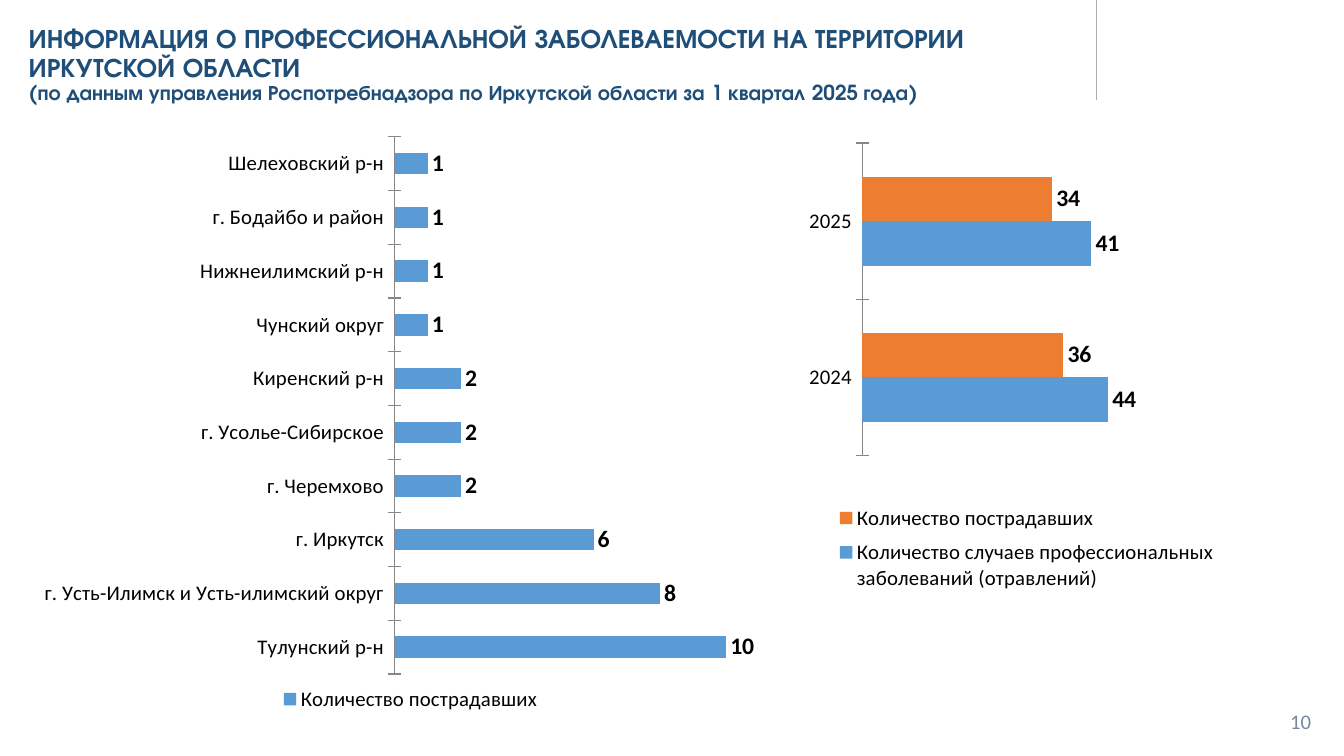
from lxml.etree import SubElement
from pptx import Presentation
from pptx.chart.data import CategoryChartData
from pptx.dml.color import RGBColor
from pptx.enum.chart import XL_CHART_TYPE, XL_LABEL_POSITION, XL_LEGEND_POSITION, XL_TICK_MARK
from pptx.enum.shapes import MSO_CONNECTOR
from pptx.enum.text import MSO_ANCHOR, MSO_AUTO_SIZE, PP_ALIGN
from pptx.oxml import parse_xml
from pptx.oxml.ns import nsdecls, qn
from pptx.util import Cm, Pt

BLUE, ORANGE = "5B9BD5", "ED7D31"


def color(value):
    return RGBColor.from_string(value)


def chart_layout(x, y, width, height, inner=False):
    target = '<c:layoutTarget val="inner"/>' if inner else ""
    return parse_xml(
        f'<c:layout {nsdecls("c")}><c:manualLayout>{target}'
        '<c:xMode val="edge"/><c:yMode val="edge"/>'
        f'<c:x val="{x}"/><c:y val="{y}"/><c:w val="{width}"/><c:h val="{height}"/>'
        "</c:manualLayout></c:layout>"
    )


presentation = Presentation()
presentation.slide_width, presentation.slide_height = Cm(32), Cm(18.01)
slide = presentation.slides.add_slide(presentation.slide_layouts[5])

# Title with the source of the data
title = slide.shapes.title
title.left, title.top, title.width, title.height = Cm(0.43), Cm(0.48), Cm(25.93), Cm(2.03)
title_frame = title.text_frame
title_frame.auto_size = MSO_AUTO_SIZE.NONE
title_frame.vertical_anchor = MSO_ANCHOR.TOP
paragraph = title_frame.paragraphs[0]
paragraph.alignment = PP_ALIGN.LEFT
paragraph.line_spacing = 0.9
title_lines = [
    ("ИНФОРМАЦИЯ О ПРОФЕССИОНАЛЬНОЙ ЗАБОЛЕВАЕМОСТИ НА ТЕРРИТОРИИ ИРКУТСКОЙ ОБЛАСТИ", 18),
    ("(по данным управления Роспотребнадзора по Иркутской области за 1 квартал 2025 года)", 14),
]
for index, (text, size) in enumerate(title_lines):
    if index:
        paragraph.add_line_break()
    run = paragraph.add_run()
    run.text = text
    run.font.size = Pt(size)
    run.font.name = "TeX Gyre Adventor"
    run.font.bold = True
    run.font.color.rgb = color("1F4E79")

# Vertical rule beside the title
rule = slide.shapes.add_connector(MSO_CONNECTOR.STRAIGHT, Cm(26.11), Cm(0), Cm(26.11), Cm(2.39))
rule.line.color.rgb = color("AFABAB")
rule.line.width = Pt(0.75)
SubElement(rule._element.spPr, qn("a:effectLst"))

# Bar charts: by district and by year
charts = [
    {
        "place": (0.74, 3.12, 18.26, 14.25),
        "categories": ["Тулунский р-н", "г. Усть-Илимск и Усть-илимский округ", "г. Иркутск",
                       "г. Черемхово", "г. Усолье-Сибирское", "Киренский р-н", "Чунский округ",
                       "Нижнеилимский р-н", "г. Бодайбо и район", "Шелеховский р-н"],
        "series": [("Количество пострадавших", [10, 8, 6, 2, 2, 2, 1, 1, 1, 1], BLUE)],
        "maximum": 12,
        "plot": (0.474, 0.01, 0.519, 0.898),
        "legend": (0.31, 0.92, 0.37, 0.06),
        "legend_position": XL_LEGEND_POSITION.RIGHT,
    },
    {
        "place": (18.67, 3.15, 10.9, 12.95),
        "categories": ["2024", "2025"],
        "series": [
            ("Количество случаев профессиональных заболеваний (отравлений)", [44, 41], BLUE),
            ("Количество пострадавших", [36, 34], ORANGE),
        ],
        "maximum": 50,
        "plot": (0.171, 0.02, 0.61, 0.575),
        "legend": (0.09, 0.67, 0.88, 0.19),
        "legend_position": XL_LEGEND_POSITION.BOTTOM,
    },
]
for settings in charts:
    data = CategoryChartData()
    data.categories = settings["categories"]
    for name, values, _ in settings["series"]:
        data.add_series(name, values)
    place = [Cm(length) for length in settings["place"]]
    chart = slide.shapes.add_chart(XL_CHART_TYPE.BAR_CLUSTERED, *place, data).chart
    chart.has_title = False
    chart.font.name = "Calibri"
    chart.font.size = Pt(18)
    chart.font.color.rgb = color("000000")

    # Axes
    category_axis, value_axis = chart.category_axis, chart.value_axis
    category_axis.tick_labels.font.size = Pt(14)
    category_axis.major_tick_mark = XL_TICK_MARK.CROSS
    category_axis.format.line.color.rgb = color("868686")
    category_axis.format.line.width = Pt(0.75)
    value_axis.minimum_scale, value_axis.maximum_scale = 0, settings["maximum"]
    value_axis.has_major_gridlines = False
    value_axis.visible = False

    # Bars and their values
    plot = chart.plots[0]
    plot.vary_by_categories = False
    plot.gap_width, plot.overlap = 150, 0
    for series, (_, _, fill) in zip(plot.series, settings["series"]):
        series.format.fill.solid()
        series.format.fill.fore_color.rgb = color(fill)
        labels = series.data_labels
        labels.show_value = True
        labels.position = XL_LABEL_POSITION.OUTSIDE_END
        labels.font.size = Pt(16)
        labels.font.bold = True

    # Legend and placement inside the chart
    chart.has_legend = True
    legend = chart.legend
    legend.position = settings["legend_position"]
    legend.include_in_layout = False
    legend.font.size = Pt(14)
    plot_area = chart._chartSpace.find(".//" + qn("c:plotArea"))
    for element in (plot_area, legend._element):
        for layout in element.findall(qn("c:layout")):
            element.remove(layout)
    plot_area.insert(0, chart_layout(*settings["plot"], inner=True))
    legend._element.find(qn("c:legendPos")).addnext(chart_layout(*settings["legend"]))

# Page number
number_box = slide.shapes.add_textbox(Cm(24), Cm(16.69), Cm(7.47), Cm(0.97))
number_box.text_frame.word_wrap = True
number_box.text_frame.vertical_anchor = MSO_ANCHOR.MIDDLE
paragraph = number_box.text_frame.paragraphs[0]
paragraph.text = "10"
paragraph.alignment = PP_ALIGN.RIGHT
paragraph.font.name = "Calibri"
paragraph.font.size = Pt(14)
paragraph.font.color.rgb = color("7688A1")

presentation.save("out.pptx")
